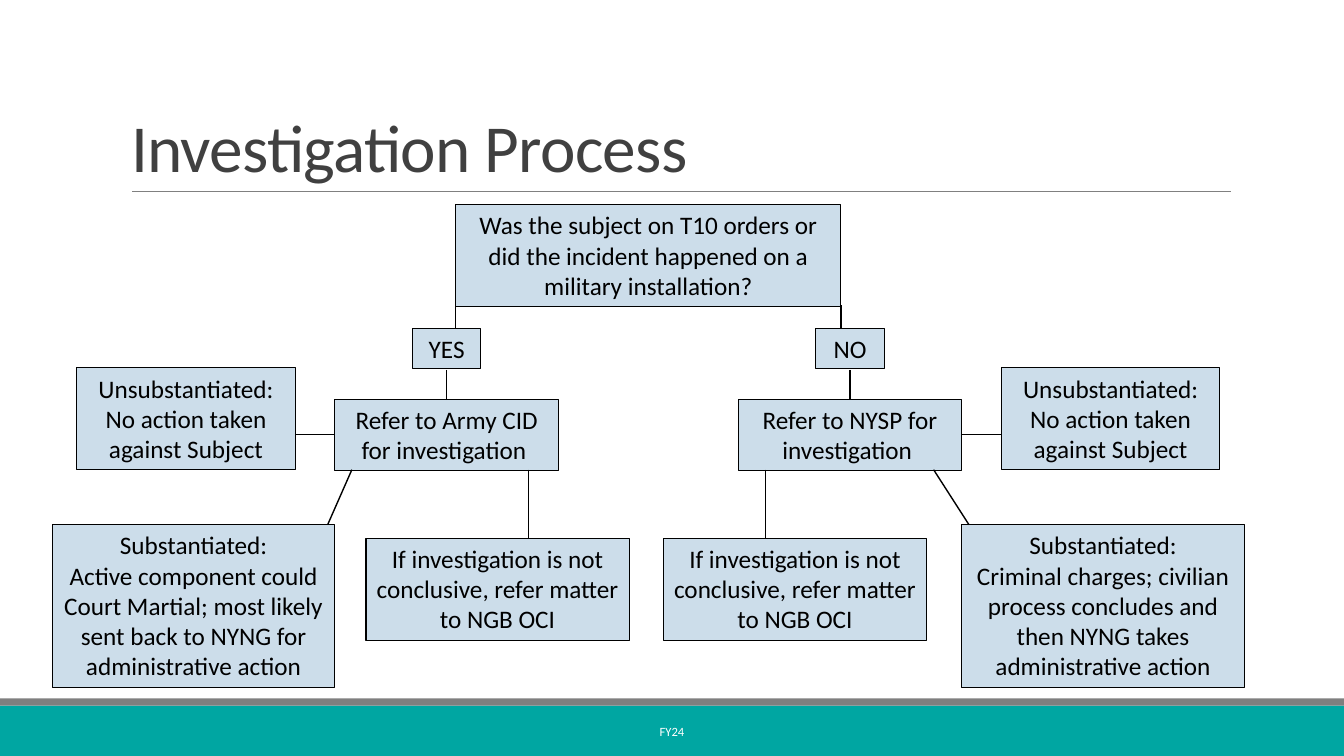
from dataclasses import dataclass

from lxml import etree
from pptx import Presentation
from pptx.dml.color import RGBColor
from pptx.enum.shapes import MSO_CONNECTOR, MSO_SHAPE
from pptx.enum.text import MSO_ANCHOR, MSO_AUTO_SIZE, PP_ALIGN
from pptx.oxml.ns import qn
from pptx.util import Inches, Pt

RECT = MSO_SHAPE.RECTANGLE
STRAIGHT = MSO_CONNECTOR.STRAIGHT
TOP, MIDDLE, BOTTOM = MSO_ANCHOR.TOP, MSO_ANCHOR.MIDDLE, MSO_ANCHOR.BOTTOM
LEFT, CENTER = PP_ALIGN.LEFT, PP_ALIGN.CENTER
NO_FIT = MSO_AUTO_SIZE.NONE
TITLE_ONLY = 5

# Grid of tenth-inch cells; the flowchart mirrors about AXIS
COLS, ROWS = 133.3, 75
CELL = Inches(0.1)
AXIS = 64.3


@dataclass(frozen=True)
class Theme:
    font: str = "Calibri"
    title: str = "404040"
    ink: str = "000000"
    box: str = "CCDDEA"
    band: str = "00A6A2"
    stripe: str = "7F7F7F"
    rule: str = "808080"
    white: str = "FFFFFF"
    title_pt: float = 48
    body_pt: float = 18
    footer_pt: float = 9
    box_pt: float = 0.75
    link_pt: float = 1
    rule_pt: float = 0.5


def cells(*lengths):
    return [round(n * CELL) for n in lengths]


def write(sp, text, *, font, size, color, align=CENTER, anchor=TOP,
          line_spacing=None, tracking=None):
    """Fill a shape with text, one paragraph per line."""
    tf = sp.text_frame
    tf.word_wrap = True
    tf.auto_size = NO_FIT
    tf.vertical_anchor = anchor
    for i, line in enumerate(text.split("\n")):
        p = tf.add_paragraph() if i else tf.paragraphs[0]
        p.alignment = align
        if line_spacing:
            p.line_spacing = line_spacing
        r = p.add_run()
        r.text = line
        r.font.name = font
        r.font.size = Pt(size)
        r.font.color.rgb = RGBColor.from_string(color)
        if tracking:
            r._r.get_or_add_rPr().set("spc", str(round(tracking * 100)))


class SlideBuilder:
    def __init__(self, slide, theme):
        self.slide = slide
        self.theme = theme

    def title(self, text, x, y, w, h):
        sp = self.slide.shapes.title
        sp.left, sp.top, sp.width, sp.height = cells(x, y, w, h)
        t = self.theme
        write(sp, text, font=t.font, size=t.title_pt, color=t.title, align=LEFT,
              anchor=BOTTOM, line_spacing=0.85, tracking=-0.5)

    def bar(self, x, y, w, h, color):
        sp = self.slide.shapes.add_shape(RECT, *cells(x, y, w, h))
        sp.shadow.inherit = False
        sp.fill.solid()
        sp.fill.fore_color.rgb = RGBColor.from_string(color)
        sp.line.fill.background()
        return sp

    def box(self, text, x, y, w, h):
        t = self.theme
        sp = self.bar(x, y, w, h, t.box)
        sp.line.color.rgb = RGBColor.from_string(t.ink)
        sp.line.width = Pt(t.box_pt)
        write(sp, text, font=t.font, size=t.body_pt, color=t.ink)

    def line(self, x1, y1, x2, y2, color, width):
        cn = self.slide.shapes.add_connector(STRAIGHT, *cells(x1, y1, x2, y2))
        cn.line.color.rgb = RGBColor.from_string(color)
        cn.line.width = Pt(width)
        etree.SubElement(cn._element.spPr, qn("a:effectLst"))

    def link(self, x1, y1, x2, y2):
        self.line(x1, y1, x2, y2, self.theme.ink, self.theme.link_pt)

    def footer(self, text, x, y, w, h):
        sp = self.slide.shapes.add_textbox(*cells(x, y, w, h))
        t = self.theme
        write(sp, text, font=t.font, size=t.footer_pt, color=t.white, anchor=MIDDLE)

    def branch(self, side, answer, referral, outcome, oci_gap, oci_x, fork_x):
        """Draw one branch; side is -1 left of the axis and 1 right of it.

        Distances are measured outward from the axis.
        """
        def at(d):
            return AXIS + side * d

        def box(text, near, y, w, h):
            self.box(text, at(near) if side > 0 else at(near + w), y, w, h)

        box(answer, 16.6, 32.6, 6.8, 4)
        box(referral, 8.9, 39.6, 22.2, 7.1)
        box("If investigation is not conclusive, refer matter to NGB OCI",
            oci_gap, 53.4, 26.1, 10.1)
        box("Unsubstantiated:\nNo action taken against Subject", 35, 36.5, 21.7, 10.1)
        box("Substantiated:\n" + outcome, 31.1, 52.05, 28, 16.2)

        self.link(at(19.1), 30.3, at(19.1), 32.6)
        self.link(at(20), 36.7, at(20), 39.6)
        self.link(at(31.1), 43.1, at(35), 43.1)
        self.link(at(fork_x), 46.6, at(31.8), 52.05)
        self.link(at(oci_x), 46.6, at(oci_x), 53.4)


def main():
    prs = Presentation()
    prs.slide_width, prs.slide_height = cells(COLS, ROWS)
    theme = Theme()
    s = SlideBuilder(prs.slides.add_slide(prs.slide_layouts[TITLE_ONLY]), theme)

    # Frame and title
    s.bar(0, 70, COLS, 5, theme.band)
    s.bar(0, 69.3, COLS, 0.7, theme.stripe)
    s.line(13.1, 19, 122.1, 19, theme.rule, theme.rule_pt)
    s.title("Investigation Process", 12, 3.1, 110, 15.9)

    # Opening question
    s.box("Was the subject on T10 orders or did the incident happened on a "
          "military installation?", AXIS - 19.1, 20.3, 38.2, 10.1)

    # Yes and no branches
    s.branch(-1, "YES", "Refer to Army CID for investigation ",
             "Active component could Court Martial; most likely sent back to "
             "NYNG for administrative action",
             oci_gap=1.9, oci_x=11.9, fork_x=29.4)
    s.branch(1, "NO", "Refer to NYSP for investigation ",
             "Criminal charges; civilian process concludes and then NYNG takes "
             "administrative action",
             oci_gap=1.5, oci_x=11.6, fork_x=28.3)

    # Footer
    s.footer("FY24", 40.3, 70.6, 52.7, 4)

    prs.save("out.pptx")


if __name__ == "__main__":
    main()
